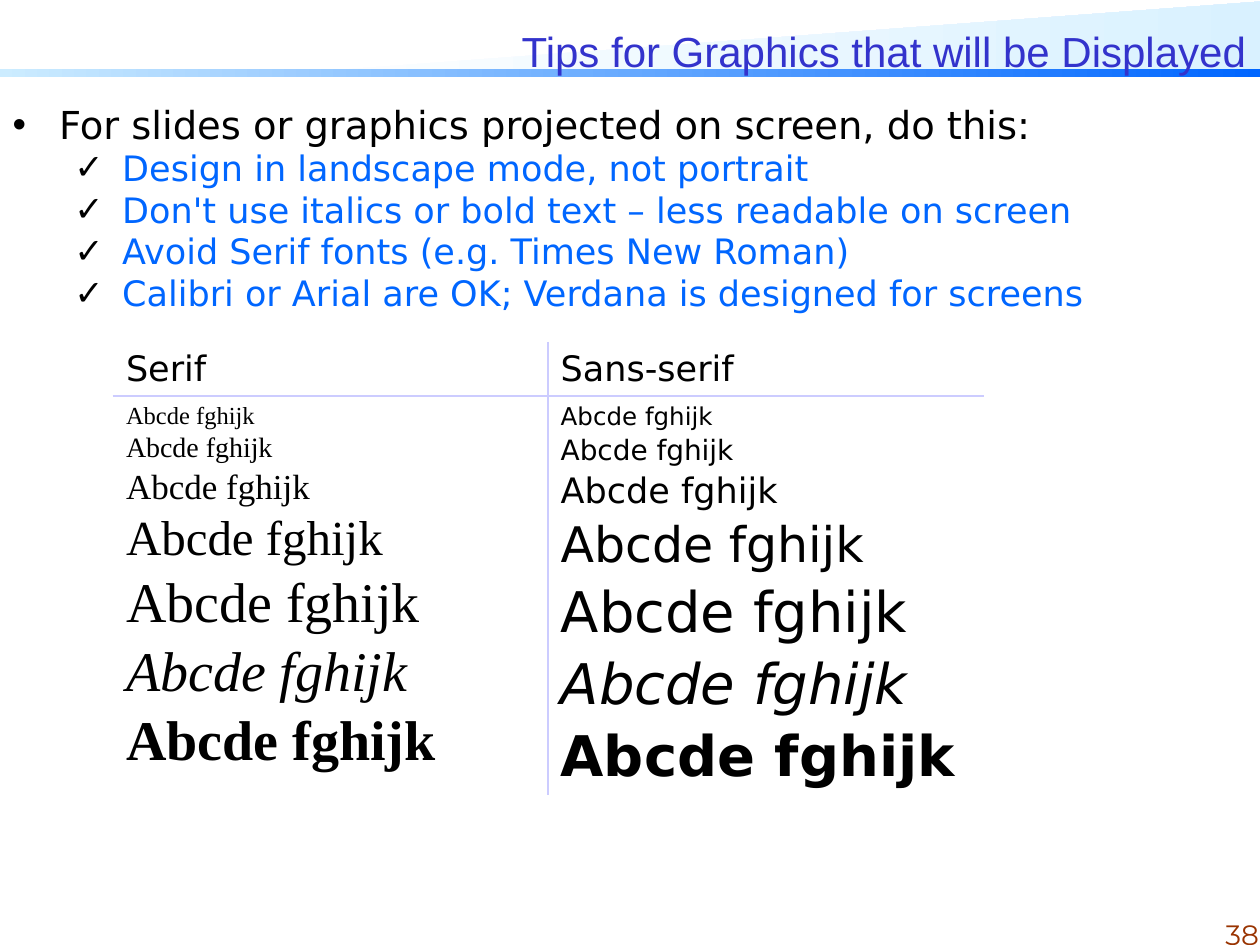
from lxml import etree
from pptx import Presentation
from pptx import util as u
from pptx.dml.color import RGBColor
from pptx.enum import shapes, text
from pptx.oxml.ns import qn

SANS, SERIF = "DejaVu Sans", "Times New Roman"
BLACK, BLUE, RULE = "000000", "0066FF", "CCCCFF"
TIPS = [
    "Design in landscape mode, not portrait",
    "Don't use italics or bold text – less readable on screen",
    "Avoid Serif fonts (e.g. Times New Roman)",
    "Calibri or Arial are OK; Verdana is designed for screens",
]
# size, italic, bold
SAMPLES = [(size, False, False) for size in (14, 16, 20, 28, 32)]
SAMPLES += [(32, True, False), (32, False, True)]


def color(hex_string):
    return RGBColor.from_string(hex_string)


def place(shape, box):
    shape.left, shape.top, shape.width, shape.height = map(u.Inches, box)


def write(paragraph, words, size, face, ink=BLACK, italic=False, bold=False,
          first=False):
    """Fill a paragraph, with a gap of a tenth of its line above it."""
    paragraph.text = words
    paragraph.space_before = u.Pt(0 if first else round(size * 0.115, 1))
    font = paragraph.font
    font.size, font.name = u.Pt(size), face
    font.italic, font.bold = italic, bold
    font.color.rgb = color(ink)


def set_bullet(paragraph, mark, left, hanging):
    props = paragraph._p.get_or_add_pPr()
    props.set("marL", str(u.Inches(left)))
    props.set("indent", str(-u.Inches(hanging)))
    tint = etree.SubElement(props, qn("a:buClr"))
    etree.SubElement(tint, qn("a:srgbClr"), val=BLACK)
    etree.SubElement(props, qn("a:buChar"), char=mark)


def add_gradient(slide, preset, box, start, end):
    shape = slide.shapes.add_shape(preset, *map(u.Inches, box))
    shape.shadow.inherit = False
    shape.line.fill.background()
    shape.fill.gradient()
    shape.fill.gradient_angle = 0
    for stop, hex_string in zip(shape.fill.gradient_stops, (start, end)):
        stop.color.rgb = color(hex_string)
    return shape


def add_banner(slide):
    """Draw the wedge and the bar behind the placeholders."""
    wedge = add_gradient(slide, shapes.MSO_SHAPE.ISOSCELES_TRIANGLE,
                         (1.94, 0.01, 8.1, 0.6), "FFFFFF", "D9F1FF")
    wedge.adjustments[0] = 1
    bar = add_gradient(slide, shapes.MSO_SHAPE.RECTANGLE,
                       (0, 0.55, 10, 0.06), "CCECFF", BLUE)
    tree = slide.shapes._spTree
    for index, part in enumerate((wedge, bar), start=2):
        tree.insert(index, part._element)


def fill_title(title, box):
    place(title, box)
    frame = title.text_frame
    frame.auto_size = text.MSO_AUTO_SIZE.NONE
    frame.vertical_anchor = text.MSO_ANCHOR.MIDDLE
    frame.margin_right = u.Inches(0.19)
    heading = frame.paragraphs[0]
    write(heading, "Tips for Graphics that will be Displayed", 24, "Arial",
          "3333CC", first=True)
    heading.alignment = text.PP_ALIGN.RIGHT


def fill_tips(body, box):
    place(body, box)
    frame = body.text_frame
    frame.auto_size = text.MSO_AUTO_SIZE.NONE
    lead = frame.paragraphs[0]
    set_bullet(lead, "•", 0.37, 0.37)
    write(lead, "For slides or graphics projected on screen, do this:",
          22, SANS, first=True)
    for words in TIPS:
        tip = frame.add_paragraph()
        tip.level = 1
        set_bullet(tip, "✓", 0.87, 0.38)
        tip.line_spacing = 0.9
        write(tip, words, 20, SANS, BLUE)


def set_borders(cell, sides):
    """Rule the given sides, listed in the order L, R, T, B."""
    props = cell._tc.get_or_add_tcPr()
    for index, side in enumerate(sides):
        line = etree.Element(qn(f"a:ln{side}"), w=str(u.Pt(1.5)))
        fill = etree.SubElement(line, qn("a:solidFill"))
        etree.SubElement(fill, qn("a:srgbClr"), val=RULE)
        props.insert(index, line)


def add_font_table(slide, box):
    table = slide.shapes.add_table(2, 2, *map(u.Inches, box)).table
    table.first_row = table.horz_banding = False
    header_height = 0.42
    table.rows[0].height = u.Inches(header_height)
    table.rows[1].height = u.Inches(box[3] - header_height)
    columns = [("Serif", SERIF, "R"), ("Sans-serif", SANS, "L")]
    for column, (label, face, inner_side) in enumerate(columns):
        header, samples = table.cell(0, column), table.cell(1, column)
        for cell, edge in ((header, "B"), (samples, "T")):
            cell.fill.background()
            set_borders(cell, inner_side + edge)
        write(header.text_frame.paragraphs[0], label, 20, SANS, first=True)
        frame = samples.text_frame
        for row, (size, italic, bold) in enumerate(SAMPLES):
            sample = frame.add_paragraph() if row else frame.paragraphs[0]
            write(sample, "Abcde fghijk", size, face, italic=italic,
                  bold=bold, first=row == 0)


def add_page_number(slide, box):
    frame = slide.shapes.add_textbox(*map(u.Inches, box)).text_frame
    frame.word_wrap = True
    number = frame.paragraphs[0]
    write(number, "38", 16, "Montserrat", "993300", first=True)
    number.alignment = text.PP_ALIGN.RIGHT


def main():
    deck = Presentation()
    deck.slide_width, deck.slide_height = u.Inches(10), u.Inches(7.5)
    slide = deck.slides.add_slide(deck.slide_layouts[1])
    add_banner(slide)
    fill_title(slide.shapes.title, (-0.02, 0.06, 10.1, 0.69))
    fill_tips(slide.placeholders[1], (0, 0.75, 9.4, 6.3))
    add_font_table(slide, (0.9, 2.72, 6.9, 3.55))
    add_page_number(slide, (8.01, 7.23, 2.08, 0.5))
    deck.save("out.pptx")


if __name__ == "__main__":
    main()
